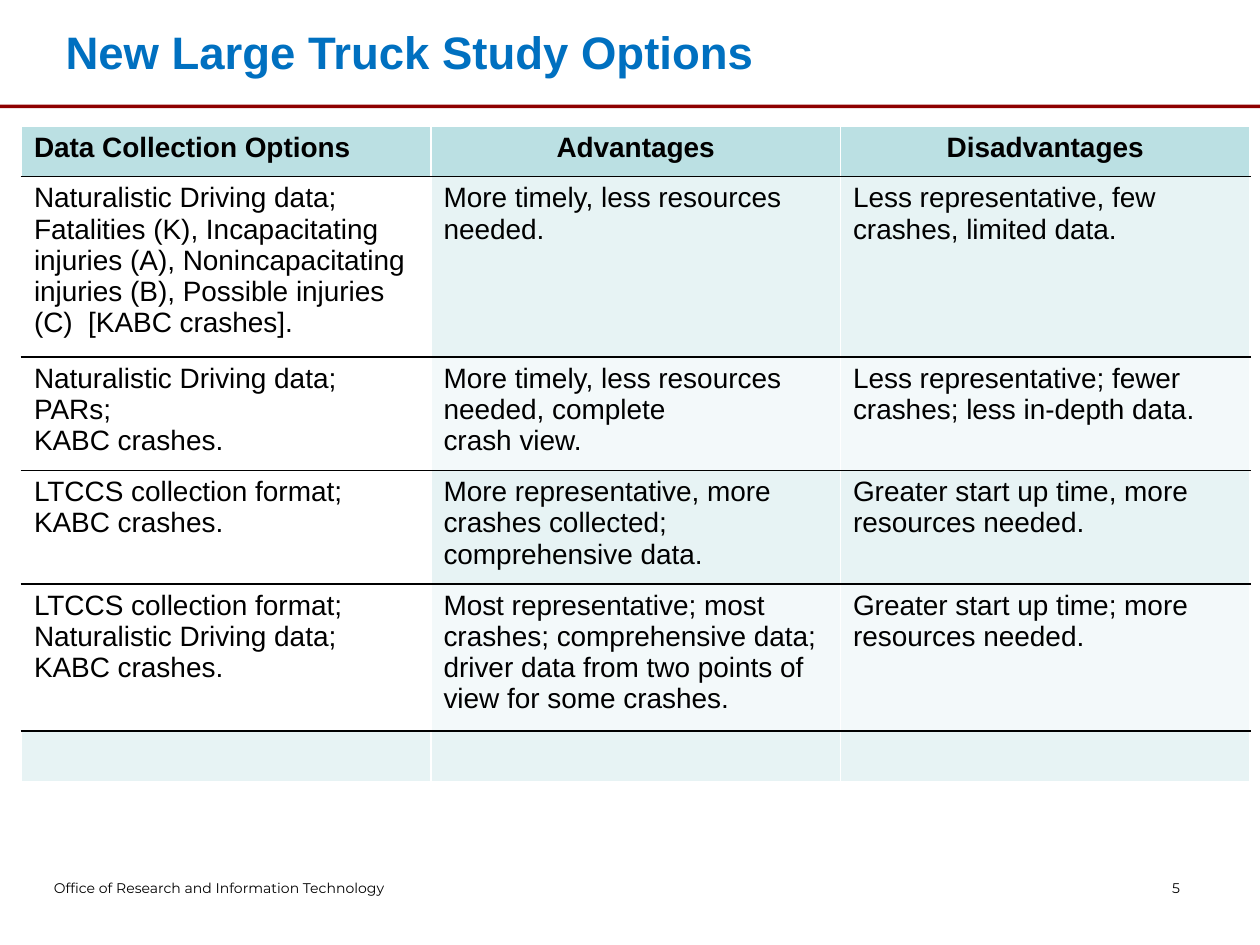
"""Builds the slide comparing large truck study options."""
import pptx
import pptx.dml.color
import pptx.enum.shapes
import pptx.enum.text
import pptx.oxml
import pptx.oxml.ns
import pptx.util

Inches = pptx.util.Inches
Align = pptx.enum.text.PP_ALIGN
Anchor = pptx.enum.text.MSO_ANCHOR
HUES = {"title": "0070C0", "rule": "8E0000", "ink": "000000", "white": "FFFFFF",
        "head": "BBE0E3", "dark": "E7F3F4", "light": "F3F9FA"}
HEADS = ["Data Collection Options", "Advantages", "Disadvantages"]
ROWS = [
    ["Naturalistic Driving data;\nFatalities (K), Incapacitating injuries (A), "
     "Nonincapacitating injuries (B), Possible injuries (C)  [KABC crashes].",
     "More timely, less resources needed.",
     "Less representative, few crashes, limited data."],
    ["Naturalistic Driving data;\nPARs;\nKABC crashes.",
     "More timely, less resources needed, complete\ncrash view.",
     "Less representative; fewer crashes; less in-depth data."],
    ["LTCCS collection format; KABC crashes.",
     "More representative, more crashes collected; comprehensive data.",
     "Greater start up time, more resources needed."],
    ["LTCCS collection format;\nNaturalistic Driving data; KABC crashes.",
     "Most representative; most crashes; comprehensive data; "
     "driver data from two points of view for some crashes.",
     "Greater start up time; more resources needed."],
    ["", "", ""],
]
TALL = [0.4, 1.43, 0.9, 0.9, 1.17, 0.4]


class Page:
    def __init__(self, deck):
        self.slide = deck.slides.add_slide(deck.slide_layouts[5])
        self.shapes = self.slide.shapes

    def hue(self, name):
        return pptx.dml.color.RGBColor.from_string(HUES[name])

    def label(self, frame, text, size, face="Arial", ink="ink", bold=False, align=Align.LEFT):
        frame.text = text
        for par in frame.paragraphs:
            par.alignment = align
            for run in par.runs:
                run.font.name = face
                run.font.size = pptx.util.Pt(size)
                run.font.bold = bold
                run.font.color.rgb = self.hue(ink)

    def place(self, shape, box):
        shape.left, shape.top, shape.width, shape.height = map(Inches, box)

    def title(self, text, box):
        shape = self.shapes.title
        self.place(shape, box)
        frame = shape.text_frame
        frame.word_wrap = True
        frame.auto_size = pptx.enum.text.MSO_AUTO_SIZE.NONE
        frame.vertical_anchor = Anchor.TOP
        frame.margin_top = Inches(0.09)
        self.label(frame, text, 26, ink="title", bold=True)

    def bar(self, box):
        kind = pptx.enum.shapes.MSO_SHAPE.RECTANGLE
        shape = self.shapes.add_shape(kind, *map(Inches, box))
        shape.shadow.inherit = False
        shape.fill.solid()
        shape.fill.fore_color.rgb = self.hue("rule")
        shape.line.fill.background()

    def note(self, text, box, align=Align.LEFT):
        frame = self.shapes.add_textbox(*map(Inches, box)).text_frame
        frame.word_wrap = True
        frame.vertical_anchor = Anchor.MIDDLE
        self.label(frame, text, 8, face="Montserrat", align=align)

    def edge(self, cell, side, name):
        props = cell._tc.get_or_add_tcPr()
        props.append(pptx.oxml.parse_xml(
            f'<a:ln{side} {pptx.oxml.ns.nsdecls("a")} w="12700"><a:solidFill>'
            f'<a:srgbClr val="{HUES[name]}"/></a:solidFill></a:ln{side}>'))

    def cell(self, cell, text, row, col, last):
        head = row == 0
        align = Align.CENTER if head and col else Align.LEFT
        self.label(cell.text_frame, text, 16, bold=head, align=align)
        sides = {"L": "white", "R": "white", "T": "white" if head else "ink",
                 "B": "white" if row == last else "ink"}
        for side, name in sides.items():
            self.edge(cell, side, name)
        if head:
            fill = "head"
        elif col == 0 and row < last:
            fill = "white"
        else:
            fill = "dark" if row % 2 else "light"
        cell.fill.solid()
        cell.fill.fore_color.rgb = self.hue(fill)

    def table(self, rows, tall, box):
        grid = self.shapes.add_table(len(rows), len(rows[0]), *map(Inches, box)).table
        for row, texts in enumerate(rows):
            grid.rows[row].height = Inches(tall[row])
            for col, text in enumerate(texts):
                self.cell(grid.cell(row, col), text, row, col, len(rows) - 1)


def main():
    deck = pptx.Presentation()
    deck.slide_width, deck.slide_height = Inches(10), Inches(7.5)
    page = Page(deck)
    page.note("5", (8.92, 6.93, 0.83, 0.24), Align.CENTER)
    page.note("Office of Research and Information Technology", (0.33, 6.93, 5.5, 0.24))
    page.bar((0, 0.83, 10, 0.03))
    page.table([HEADS] + ROWS, TALL, (0.17, 1, 9.75, sum(TALL)))
    page.title("New Large Truck Study Options", (0.42, 0.1, 9.42, 0.98))
    deck.save("out.pptx")


if __name__ == "__main__":
    main()
